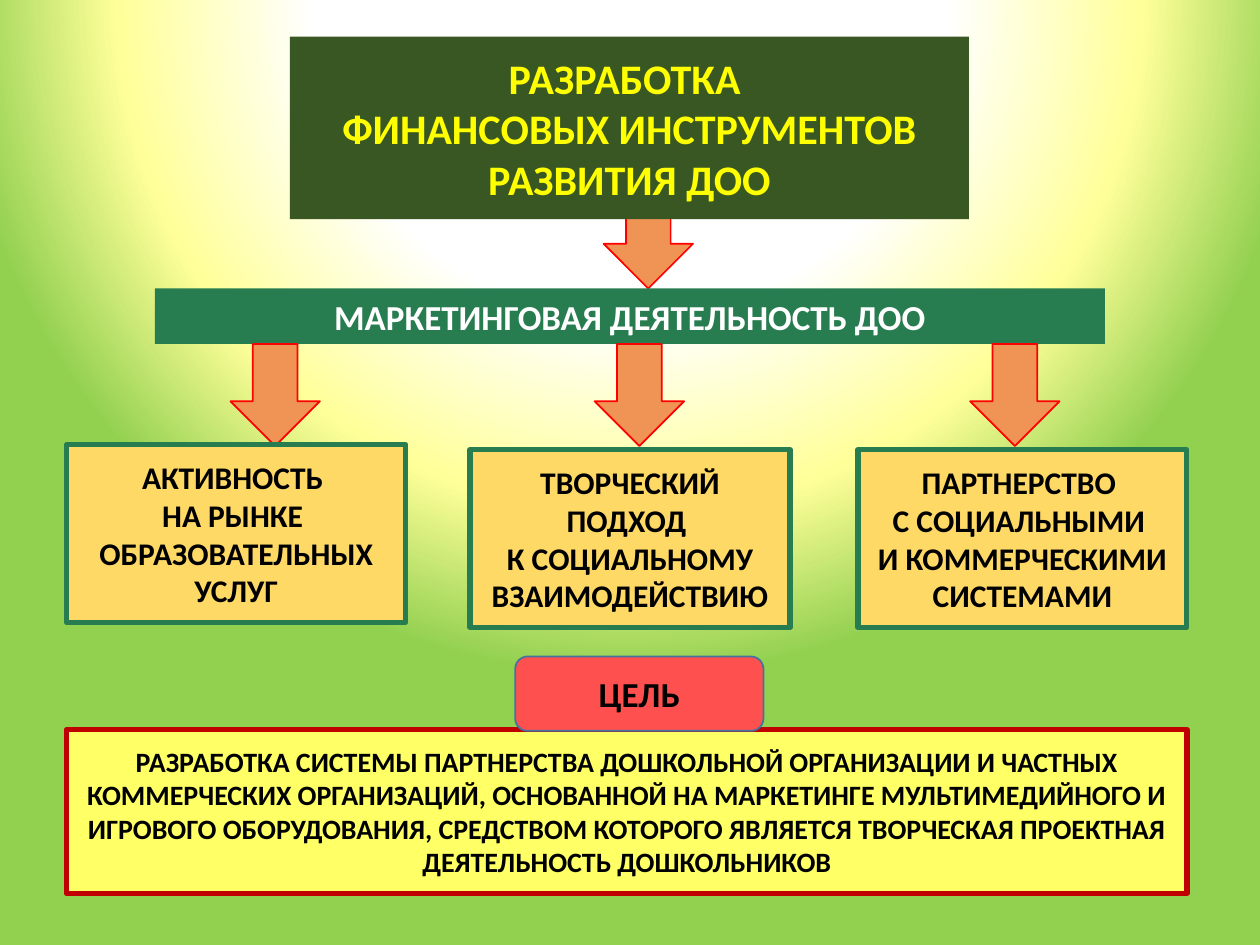
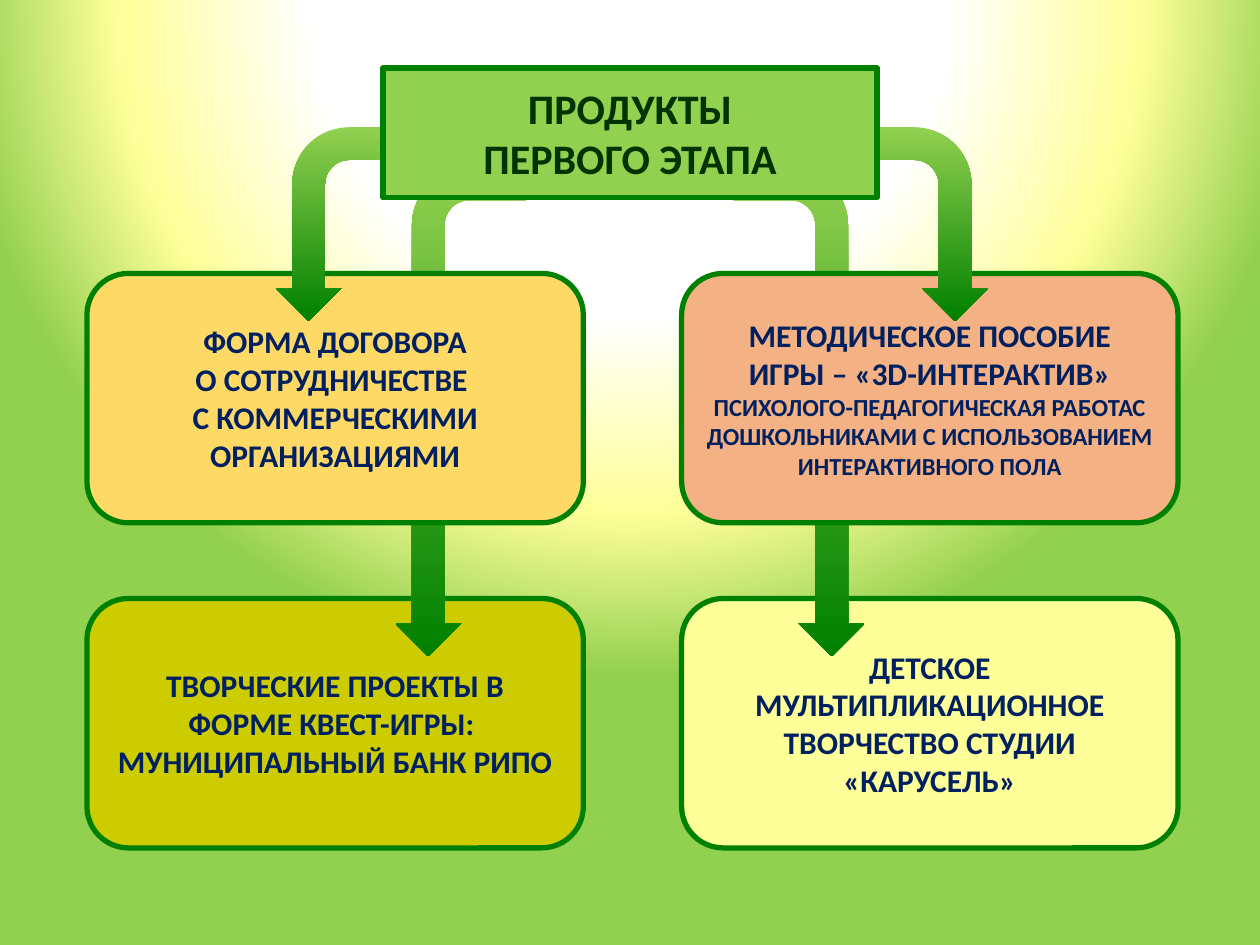
import dataclasses

import pptx
import pptx.dml.color
import pptx.enum.shapes
import pptx.enum.text
import pptx.oxml
import pptx.oxml.ns
import pptx.util

RGB = pptx.dml.color.RGBColor
KIND = pptx.enum.shapes.MSO_SHAPE
TEXT = pptx.enum.text

FONT = "Calibri"
WHITE = RGB(0xFF, 0xFF, 0xFF)
BLACK = RGB(0, 0, 0)
CREAM = RGB(0xFF, 0xFF, 0x99)
LIME = RGB(0x92, 0xD0, 0x50)
GREEN = RGB(0, 0x80, 0)
DARK = RGB(0, 0x33, 0)
MOSS = RGB(0x38, 0x57, 0x23)
TEAL = RGB(0x28, 0x7D, 0x50)
OLIVE = RGB(0xCC, 0xCC, 0)
GOLD = RGB(0xFF, 0xD9, 0x66)
LEMON = RGB(0xFF, 0xFF, 0x66)
YELLOW = RGB(0xFF, 0xFF, 0)
PEACH = RGB(0xF4, 0xB1, 0x83)
ORANGE = RGB(0xF0, 0x94, 0x56)
CORAL = RGB(0xFF, 0x50, 0x50)
RED = RGB(0xFF, 0, 0)
WINE = RGB(0xC0, 0, 0)
NAVY = RGB(0, 0x20, 0x60)
BLUE = RGB(0x43, 0x73, 0x9E)


@dataclasses.dataclass
class Box:
    x: float
    y: float
    w: float
    h: float

    def inner(self, x, y, w, h):
        """Return an inner box, given in percent of this one."""
        return Box(self.x + self.w * x / 100, self.y + self.h * y / 100,
                   self.w * w / 100, self.h * h / 100)

    def turned(self):
        """Return the frame that fills this box after a quarter turn."""
        return Box(self.x + (self.w - self.h) / 2,
                   self.y + (self.h - self.w) / 2, self.h, self.w)

    def frame(self):
        return [pptx.util.Inches(v) for v in (self.x, self.y, self.w, self.h)]


PAGE = Box(0, 0, 10, 7.5)


def paint(shape, fill, line=None, width=1):
    shape.shadow.inherit = False
    shape.fill.solid()
    shape.fill.fore_color.rgb = fill
    if line is None:
        shape.line.fill.background()
    else:
        shape.line.color.rgb = line
        shape.line.width = pptx.util.Pt(width)


def write(shape, lines, size, color):
    frame = shape.text_frame
    frame.text = "\n".join(lines)
    frame.word_wrap = True
    frame.auto_size = TEXT.MSO_AUTO_SIZE.NONE
    frame.vertical_anchor = TEXT.MSO_ANCHOR.MIDDLE
    frame.margin_left = frame.margin_right = pptx.util.Inches(0.1)
    frame.margin_top = frame.margin_bottom = pptx.util.Inches(0.05)
    for para in frame.paragraphs:
        para.alignment = TEXT.PP_ALIGN.CENTER
        for run in para.runs:
            run.font.name = FONT
            run.font.size = pptx.util.Pt(size)
            run.font.bold = True
            run.font.color.rgb = color


def add_panel(slide, box, kind, lines, size, color, fill, line=None, width=3):
    shape = slide.shapes.add_shape(kind, *box.frame())
    paint(shape, fill, line, width)
    write(shape, lines, size, color)
    return shape


def add_arrow(slide, box):
    shape = slide.shapes.add_shape(KIND.DOWN_ARROW, *box.frame())
    paint(shape, ORANGE, RED)


def add_bend(slide, box, left):
    """Draw an arrow that leaves the title sideways and turns down."""
    shape = slide.shapes.add_shape(KIND.BENT_ARROW, *box.turned().frame())
    paint(shape, LIME)
    shape.rotation = 270 if left else 90
    if left:
        shape.element.spPr.xfrm.set("flipH", "1")
    shape.fill.gradient()
    shape.fill.gradient_angle = 0
    for stop, color, place in zip(shape.fill.gradient_stops, (LIME, GREEN), (0, 1)):
        stop.color.rgb = color
        stop.position = place


def set_title(slide, box, form, lines, color, fill, line=None):
    """Shape the title placeholder and bring it to the front."""
    title = slide.shapes.title
    title.left, title.top, title.width, title.height = box.frame()
    title.element.spPr.xfrm.addnext(pptx.oxml.parse_xml(
        f'<a:prstGeom {pptx.oxml.ns.nsdecls("a")} prst="{form}"><a:avLst/></a:prstGeom>'))
    paint(title, fill, line, 3)
    write(title, lines, 24, color)
    title.element.getparent().append(title.element)


def set_back(master):
    """Give every slide the round glow from white to green."""
    master.background.fill.gradient()
    old = master.element.find(".//" + pptx.oxml.ns.qn("a:gradFill"))
    stops = "".join(f'<a:gs pos="{place}000"><a:srgbClr val="{color}"/></a:gs>'
                    for place, color in ((40, WHITE), (65, CREAM), (86, LIME)))
    old.getparent().replace(old, pptx.oxml.parse_xml(
        f'<a:gradFill {pptx.oxml.ns.nsdecls("a")} rotWithShape="1">'
        f'<a:gsLst>{stops}</a:gsLst><a:path path="circle">'
        '<a:fillToRect l="50000" t="-80000" r="50000" b="180000"/>'
        '</a:path></a:gradFill>'))


def add_head(slide, box):
    add_arrow(slide, box.inner(47.9, 54.21, 7.1, 29.67))
    add_panel(slide, box.inner(12.3, 83.88, 75.4, 16.12), KIND.RECTANGLE,
              ["МАРКЕТИНГОВАЯ ДЕЯТЕЛЬНОСТЬ ДОО"], 20, WHITE, TEAL)
    set_title(slide, box.inner(23, 10.62, 53.9, 53.11), "roundRect",
              ["РАЗРАБОТКА ", "ФИНАНСОВЫХ ИНСТРУМЕНТОВ РАЗВИТИЯ ДОО"], YELLOW, MOSS)


def add_fields(slide, box):
    fields = (
        (14.62, 0, 35.56, 30.26,
         ["АКТИВНОСТЬ ", "НА РЫНКЕ ", "ОБРАЗОВАТЕЛЬНЫХ УСЛУГ"]),
        (47.13, 36, 37.33, 28.57,
         ["ТВОРЧЕСКИЙ ПОДХОД ", "К СОЦИАЛЬНОМУ ВЗАИМОДЕЙСТВИЮ"]),
        (80.65, 70.64, 37.33, 29.36,
         ["ПАРТНЕРСТВО ", "С СОЦИАЛЬНЫМИ ", "И КОММЕРЧЕСКИМИ СИСТЕМАМИ"]),
    )
    for tip, x, y, w, lines in fields:
        add_arrow(slide, box.inner(tip, 0, 7.99, 36))
        add_panel(slide, box.inner(x, y, w, 62.67), KIND.RECTANGLE,
                  lines, 18, BLACK, GOLD, TEAL)


def add_goal(slide, box):
    goal = ("РАЗРАБОТКА СИСТЕМЫ ПАРТНЕРСТВА ДОШКОЛЬНОЙ ОРГАНИЗАЦИИ И ЧАСТНЫХ "
            "КОММЕРЧЕСКИХ ОРГАНИЗАЦИЙ, ОСНОВАННОЙ НА МАРКЕТИНГЕ МУЛЬТИМЕДИЙНОГО И "
            "ИГРОВОГО ОБОРУДОВАНИЯ, СРЕДСТВОМ КОТОРОГО ЯВЛЯЕТСЯ ТВОРЧЕСКАЯ ПРОЕКТНАЯ "
            "ДЕЯТЕЛЬНОСТЬ ДОШКОЛЬНИКОВ")
    add_panel(slide, box.inner(0, 30.85, 100, 69.15), KIND.RECTANGLE,
              [goal], 16, BLACK, LEMON, WINE)
    add_panel(slide, box.inner(40.04, 0, 22.16, 31.38), KIND.ROUNDED_RECTANGLE,
              ["ЦЕЛЬ"], 20, BLACK, CORAL, BLUE, 1)


def add_row(slide, box, cards):
    """Place two cards at the ends of a row and return them."""
    return [add_panel(slide, box.inner(x, 0, 45.5, 100), KIND.ROUNDED_RECTANGLE,
                      lines, 18, NAVY, fill, GREEN)
            for x, (lines, fill) in zip((0, 54.5), cards)]


def add_bends(slide, box, left, right):
    for x in (left, right):
        add_bend(slide, box.inner(x, 0, 12.01, 100), x == left)


def add_tree(slide, box):
    add_row(slide, box.inner(0, 68.01, 100, 31.99), (
        (["ТВОРЧЕСКИЕ ПРОЕКТЫ В ФОРМЕ КВЕСТ-ИГРЫ: ", "МУНИЦИПАЛЬНЫЙ БАНК РИПО"], OLIVE),
        (["ДЕТСКОЕ МУЛЬТИПЛИКАЦИОННОЕ ТВОРЧЕСТВО СТУДИИ «КАРУСЕЛЬ»"], CREAM)))
    add_bends(slide, box.inner(0, 12.76, 100, 62.68), 28.29, 59.24)
    guide = add_row(slide, box.inner(0, 26.33, 100, 31.99), (
        ([" ФОРМА ДОГОВОРА ", "О СОТРУДНИЧЕСТВЕ ", "С КОММЕРЧЕСКИМИ ОРГАНИЗАЦИЯМИ"], GOLD),
        (["МЕТОДИЧЕСКОЕ ПОСОБИЕ", "ИГРЫ – «3D-ИНТЕРАКТИВ»",
          "ПСИХОЛОГО-ПЕДАГОГИЧЕСКАЯ РАБОТАС ДОШКОЛЬНИКАМИ "
          "С ИСПОЛЬЗОВАНИЕМ ИНТЕРАКТИВНОГО ПОЛА"], PEACH)))[1]
    guide.text_frame.paragraphs[2].runs[0].font.size = pptx.util.Pt(14)
    add_bends(slide, box.inner(0, 7.59, 100, 24.88), 17.32, 70.55)
    set_title(slide, box.inner(27.14, 0, 45.27, 16.64), "rect",
              ["ПРОДУКТЫ", "ПЕРВОГО ЭТАПА"], DARK, LIME, GREEN)


def add_plan(slide):
    add_head(slide, PAGE.inner(0, 0, 100, 36.4))
    add_fields(slide, PAGE.inner(5.3, 36.4, 88.9, 30))
    add_goal(slide, PAGE.inner(5.3, 69.47, 88.9, 25.07))


def add_stage(slide):
    add_tree(slide, PAGE.inner(6.9, 7.2, 86.6, 82.53))


def main():
    deck = pptx.Presentation()
    deck.slide_width = pptx.util.Inches(PAGE.w)
    deck.slide_height = pptx.util.Inches(PAGE.h)
    set_back(deck.slide_master)
    for build in (add_plan, add_stage):
        build(deck.slides.add_slide(deck.slide_layouts.get_by_name("Title Only")))
    deck.save("out.pptx")


if __name__ == "__main__":
    main()
